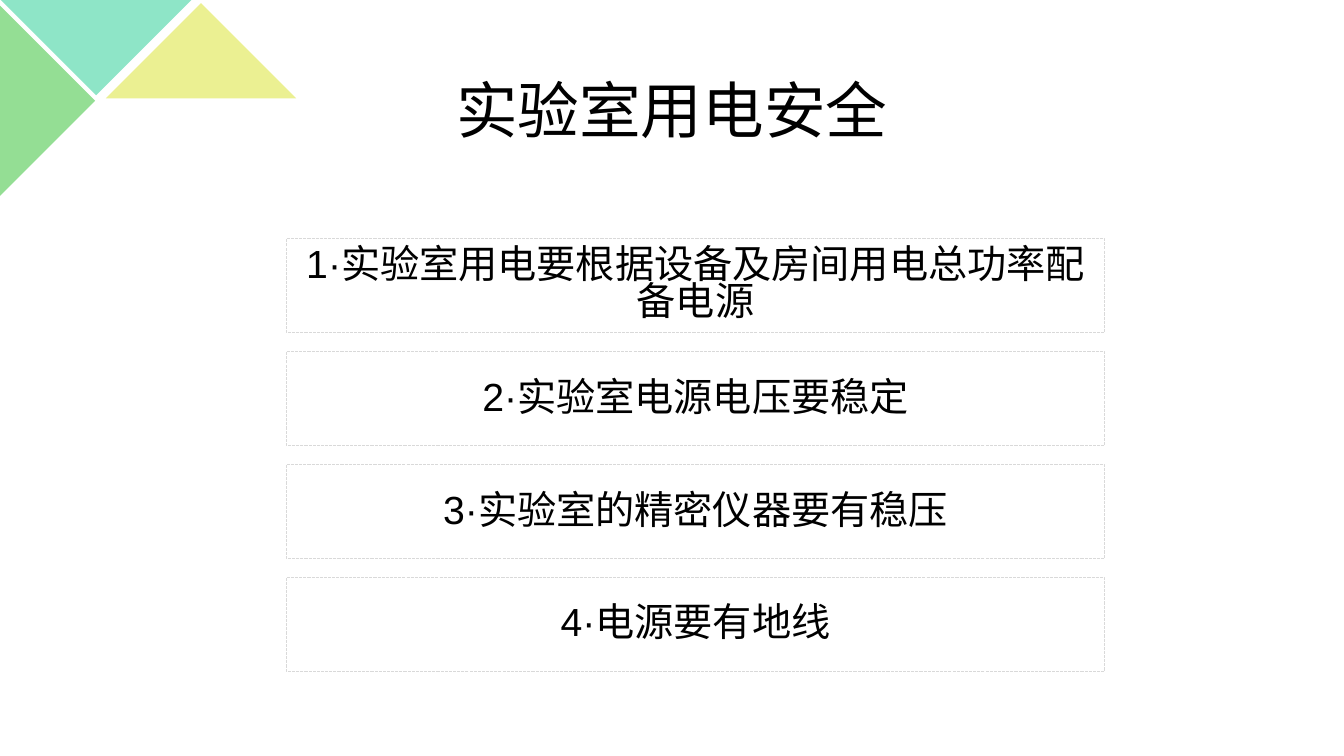
from pptx import Presentation
from pptx.dml.color import RGBColor
from pptx.enum.dml import MSO_LINE
from pptx.enum.shapes import MSO_SHAPE
from pptx.enum.text import MSO_ANCHOR, MSO_AUTO_SIZE, PP_ALIGN
from pptx.util import Pt

TRIANGLE = MSO_SHAPE.ISOSCELES_TRIANGLE
RECTANGLE = MSO_SHAPE.RECTANGLE
DASH = MSO_LINE.SQUARE_DOT
MIDDLE = MSO_ANCHOR.MIDDLE
CENTER = PP_ALIGN.CENTER
NO_AUTOFIT = MSO_AUTO_SIZE.NONE
TITLE_ONLY = 5

COLORS = {
    "text": "000000",
    "border": "D9D9D9",
    "green": "94DE94",
    "teal": "8EE5C7",
    "yellow": "EBF092",
}

RULES = [
    ("1·实验室用电要根据设备及房间用电总功率配备电源", 0.8),
    ("2·实验室电源电压要稳定", 0.9),
    ("3·实验室的精密仪器要有稳压", 0.9),
    ("4·电源要有地线", 0.9),
]


def color(name):
    return RGBColor.from_string(COLORS[name])


def write_text(shape, text, size, font="Arial", spacing=0.9, before=0):
    frame = shape.text_frame
    frame.word_wrap = True
    frame.auto_size = NO_AUTOFIT
    frame.vertical_anchor = MIDDLE
    para = frame.paragraphs[0]
    para.alignment = CENTER
    para.line_spacing = spacing
    para.space_before = Pt(before)
    span = para.add_run()
    span.text = text
    span.font.name = font
    span.font.size = Pt(size)
    span.font.color.rgb = color("text")


class SlideBuilder:
    title_size = 44
    rule_size = 28
    border_width = 0.75

    def __init__(self, page):
        self.page = page

    def shape(self, kind, left, top, width, height):
        shape = self.page.shapes.add_shape(
            kind, Pt(left), Pt(top), Pt(width), Pt(height))
        shape.shadow.inherit = False
        return shape

    def triangle(self, left, top, fill, rotation=0):
        triangle = self.shape(TRIANGLE, left, top, 136, 68)
        triangle.rotation = rotation
        triangle.fill.solid()
        triangle.fill.fore_color.rgb = color(fill)
        triangle.line.fill.background()

    def title(self, text, left, top, width, height):
        title = self.page.shapes.title
        title.left, title.top = Pt(left), Pt(top)
        title.width, title.height = Pt(width), Pt(height)
        write_text(title, text, self.title_size)
        title.element.getparent().append(title.element)

    def rule_box(self, text, spacing, left, top, width, height):
        box = self.shape(RECTANGLE, left, top, width, height)
        box.fill.background()
        box.line.color.rgb = color("border")
        box.line.width = Pt(self.border_width)
        box.line.dash_style = DASH
        write_text(box, text, self.rule_size, spacing=spacing, before=10)


def main():
    deck = Presentation()
    deck.slide_width, deck.slide_height = Pt(960), Pt(540)
    page = deck.slides.add_slide(deck.slide_layouts[TITLE_ONLY])
    builder = SlideBuilder(page)

    builder.triangle(-34, 38, "green", rotation=90)
    builder.triangle(0.7, 0, "teal", rotation=180)
    builder.triangle(75.6, 2.2, "yellow")
    builder.title("实验室用电安全", 66, 28.8, 828, 104.4)
    for row, (text, spacing) in enumerate(RULES):
        builder.rule_box(text, spacing, 204.5, 170.6 + row * 80.6, 584.6, 67)

    deck.save("out.pptx")


if __name__ == "__main__":
    main()
